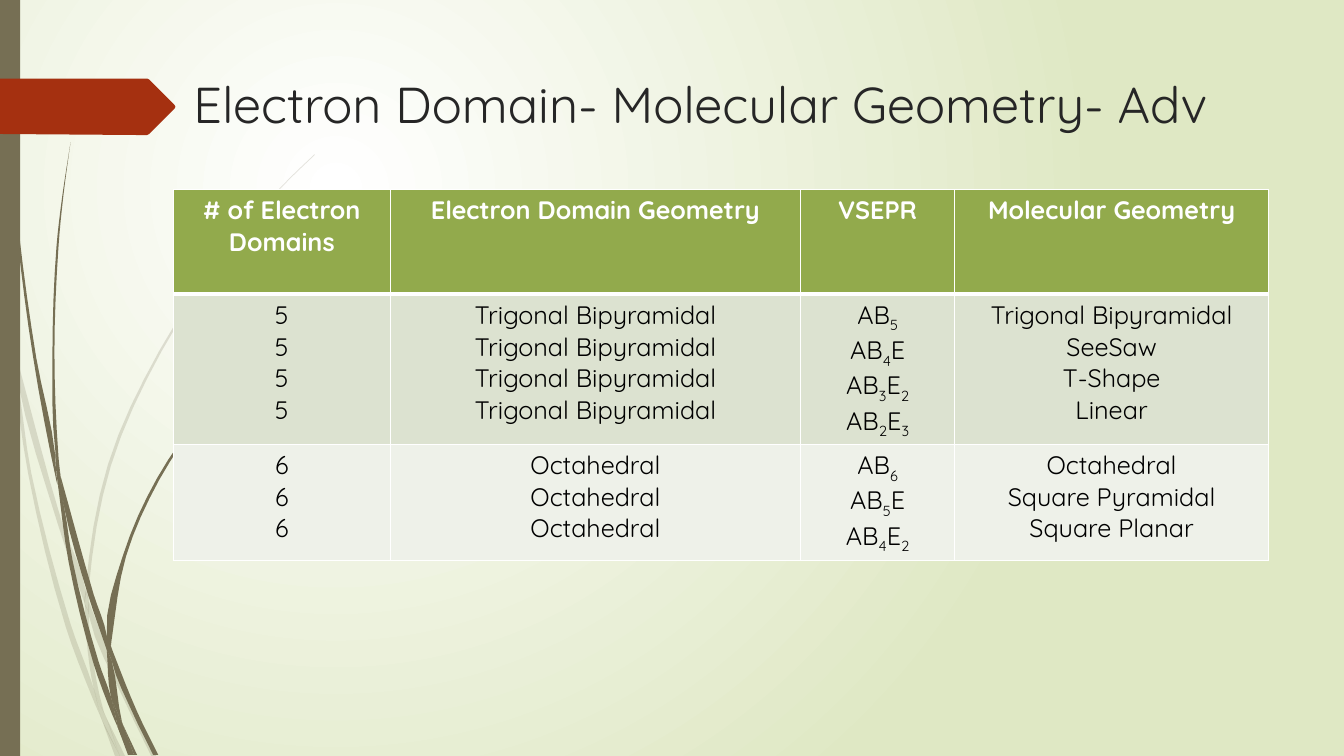
from dataclasses import dataclass
from itertools import groupby

from lxml.etree import SubElement
from pptx import Presentation
from pptx.dml.color import RGBColor
from pptx.enum.shapes import MSO_SHAPE
from pptx.enum.text import PP_ALIGN
from pptx.oxml.ns import qn
from pptx.util import Pt

PX = 9144  # EMU per px, 100 px to the inch
FONT = "Quicksand"
COLORS = {
    "white": "FFFFFF", "pale": "DFE8C4", "stem": "766F54", "tag": "A53010", "title": "262626",
    "text": "000000", "header": "92AA4C", "band_dark": "DCE2D0", "band_light": "EEF1E9",
}
HEADER_FORMAT = {"name": FONT, "size": Pt(18), "bold": True}
BODY_FORMAT = {"name": FONT, "size": Pt(18), "bold": False}
TITLE_FORMAT = {"name": FONT, "size": Pt(36)}
Points = list[tuple[float, float]]


@dataclass
class Grass:
    opacity: int  # percent
    blades: list[Points]


@dataclass
class Row:
    height: int
    fill: str
    color: str
    font: dict
    borders: tuple[int, int]  # top and bottom, in points
    cells: list[list[str]]


PALE_GRASS = Grass(20, [
    [(11, 350), (9, 322), (0, 282), (0, 299), (10, 344)],
    [(58, 522), (84, 599), (85, 586), (62, 520), (14, 345), (17, 376)],
    [(92, 607), (88, 596), (88, 610), (123, 694), (150, 750), (155, 750), (127, 692)],
    [(119, 750), (124, 750), (105, 711)],
    [(93, 683), (70, 619), (31, 469), (17, 376), (11, 350), (28, 470), (65, 621), (92, 693), (101, 714), (99, 707)],
    [(84, 599), (87, 646), (93, 683), (96, 692), (105, 711), (103, 706), (91, 646), (88, 610), (88, 608)],
    [(88, 584), (110, 462), (160, 349), (229, 245), (268, 198), (290, 175), (312, 154), (312, 153),
     (289, 175), (268, 197), (228, 244), (158, 348), (107, 461), (85, 584), (85, 586), (88, 596)],
    [(101, 714), (114, 750), (119, 750)],
    [(88, 608), (88, 610), (88, 596), (85, 586), (84, 599)],
    [(96, 692), (93, 683), (99, 707), (101, 714), (119, 750), (105, 711)],
])
DARK_GRASS = Grass(100, [
    [(7, 110), (17, 233), (33, 355), (56, 477), (57, 481), (55, 457), (55, 453), (36, 355),
     (19, 232), (8, 109), (5, 48), (4, 0), (3, 0), (4, 48)],
    [(88, 592), (106, 645), (106, 633), (106, 631), (93, 590), (60, 472), (64, 505)],
    [(113, 649), (110, 641), (111, 656), (132, 708), (152, 749), (157, 749), (136, 706)],
    [(110, 691), (98, 657), (72, 556), (64, 505), (57, 477), (68, 557), (93, 659), (111, 708), (117, 722), (116, 717)],
    [(60, 472), (58, 453), (54, 349), (58, 245), (63, 193), (70, 141), (62, 193), (56, 245), (52, 349), (55, 449)],
    [(133, 749), (136, 749), (122, 719)],
    [(57, 477), (64, 505), (60, 472), (55, 449), (55, 453)],
    [(111, 633), (125, 552), (158, 476), (205, 406), (231, 374), (245, 359), (261, 344), (260, 344),
     (245, 358), (231, 373), (204, 405), (156, 474), (122, 551), (106, 631), (110, 641)],
    [(117, 722), (127, 749), (131, 749)],
    [(106, 645), (110, 691), (116, 706), (122, 719), (121, 716), (111, 656), (109, 651)],
    [(106, 645), (109, 651), (111, 656), (110, 641), (106, 631), (106, 633)],
    [(116, 706), (110, 691), (116, 717), (117, 722), (130, 749), (133, 749), (122, 719)],
])
TITLE_TAG = [(173, 108), (148, 133), (146, 134), (136, 134), (0, 133), (0, 78), (146, 78), (148, 79),
             (173, 104), (174, 106)]

COLUMN_WIDTHS = [215, 407, 153, 311]
FORMULA_COLUMN = 2
ROWS = [
    Row(104, "header", "white", HEADER_FORMAT, (1, 3), [
        ["# of Electron Domains"], ["Electron Domain Geometry"], ["VSEPR"], ["Molecular Geometry"]]),
    Row(149, "band_dark", "text", BODY_FORMAT, (3, 1), [
        ["5"] * 4, ["Trigonal Bipyramidal"] * 4, ["AB5", "AB4E", "AB3E2", "AB2E3"],
        ["Trigonal Bipyramidal", "SeeSaw", "T-Shape", "Linear"]]),
    Row(115, "band_light", "text", BODY_FORMAT, (1, 1), [
        ["6"] * 3, ["Octahedral"] * 3, ["AB6", "AB5E", "AB4E2"],
        ["Octahedral", "Square Pyramidal", "Square Planar"]]),
]


def rgb(name: str) -> RGBColor:
    return RGBColor.from_string(COLORS[name])


def paint(shape, color: str, opacity: int = 100) -> None:
    shape.shadow.inherit = False
    shape.fill.solid()
    shape.fill.fore_color.rgb = rgb(color)
    shape.line.fill.background()
    if opacity < 100:
        fill_color = shape.fill._xPr.find(qn("a:solidFill"))[0]
        SubElement(fill_color, qn("a:alpha")).set("val", str(opacity * 1000))


def tangent(incoming: complex, outgoing: complex, length: float) -> complex | None:
    direction = incoming / abs(incoming) + outgoing / abs(outgoing)
    return direction / abs(direction) * length if abs(direction) > 1.9 else None


def bend(points: Points) -> Points:
    # Curve through the points, keeping sharp corners
    curve = []
    for index in range(len(points)):
        before, start, end, after = (complex(*points[(index + step) % len(points)]) for step in (-1, 0, 1, 2))
        chord = end - start
        leaving = tangent(start - before, chord, abs(chord)) or chord
        arriving = tangent(chord, after - end, abs(chord)) or chord
        for t in (0, 0.25, 0.5, 0.75):
            spot = start + chord * t * t * (3 - 2 * t) + t * (1 - t) * (leaving * (1 - t) - arriving * t)
            curve.append((spot.real, min(spot.imag, 750)))
    return curve


def add_outline(shapes, points: Points, color: str, opacity: int = 100) -> None:
    corners = [(round(x * PX), round(y * PX)) for x, y in points]
    builder = shapes.build_freeform(*corners[0])
    builder.add_line_segments(corners[1:], close=True)
    paint(builder.convert_to_shape(), color, opacity)


def add_run(paragraph, text: str, font: dict, color: str):
    run = paragraph.add_run()
    run.text = text
    for attribute, value in font.items():
        setattr(run.font, attribute, value)
    run.font.color.rgb = rgb(color)
    return run


def set_background(slide) -> None:
    fill = slide.background.fill
    fill.gradient()
    for stop, color in zip(fill.gradient_stops, ("white", "pale")):
        stop.color.rgb = rgb(color)
    gradient = fill._xPr.find(qn("a:gradFill"))
    gradient.remove(gradient.find(qn("a:lin")))
    circle = SubElement(gradient, qn("a:path"), {"path": "circle"})
    SubElement(circle, qn("a:fillToRect"), {"l": "50000", "t": "50000", "r": "100000", "b": "100000"})


def fill_cell(cell, row: Row, lines: list[str], formula: bool) -> None:
    for side, width in zip("LRTB", (1, 1, *row.borders)):
        line = SubElement(cell._tc.get_or_add_tcPr(), qn(f"a:ln{side}"), {"w": str(Pt(width))})
        SubElement(SubElement(line, qn("a:solidFill")), qn("a:srgbClr"), {"val": COLORS["white"]})
    cell.fill.solid()
    cell.fill.fore_color.rgb = rgb(row.fill)
    for index, text in enumerate(lines):
        paragraph = cell.text_frame.add_paragraph() if index else cell.text_frame.paragraphs[0]
        paragraph.alignment = PP_ALIGN.CENTER
        for subscript, letters in groupby(text, lambda letter: formula and letter.isdigit()):
            run = add_run(paragraph, "".join(letters), row.font, row.color)
            if subscript:
                run._r.get_or_add_rPr().set("baseline", "-25000")


def add_geometry_table(slide, left: int, top: int) -> None:
    box = [length * PX for length in (left, top, sum(COLUMN_WIDTHS), sum(row.height for row in ROWS))]
    table = slide.shapes.add_table(len(ROWS), len(COLUMN_WIDTHS), *box).table
    for column, width in zip(table.columns, COLUMN_WIDTHS):
        column.width = width * PX
    for row_index, row in enumerate(ROWS):
        table.rows[row_index].height = row.height * PX
        for column_index, lines in enumerate(row.cells):
            fill_cell(table.cell(row_index, column_index), row, lines, column_index == FORMULA_COLUMN)


def main() -> None:
    presentation = Presentation()
    presentation.slide_width, presentation.slide_height = 1333 * PX, 750 * PX
    slide = presentation.slides.add_slide(presentation.slide_layouts[6])
    set_background(slide)
    # Grass, side bar and title tag
    for grass in (PALE_GRASS, DARK_GRASS):
        group = slide.shapes.add_group_shape()
        for blade in grass.blades:
            add_outline(group.shapes, bend(blade), "stem", grass.opacity)
    paint(slide.shapes.add_shape(MSO_SHAPE.RECTANGLE, 0, 0, 20 * PX, 750 * PX), "stem")
    add_outline(slide.shapes, TITLE_TAG, "tag")
    # Title and table
    frame = slide.shapes.add_textbox(182 * PX, 68 * PX, 1076 * PX, 140 * PX).text_frame
    frame.word_wrap = True
    add_run(frame.paragraphs[0], "Electron Domain- Molecular Geometry- Adv", TITLE_FORMAT, "title")
    add_geometry_table(slide, 172, 188)
    presentation.save("out.pptx")


if __name__ == "__main__":
    main()
